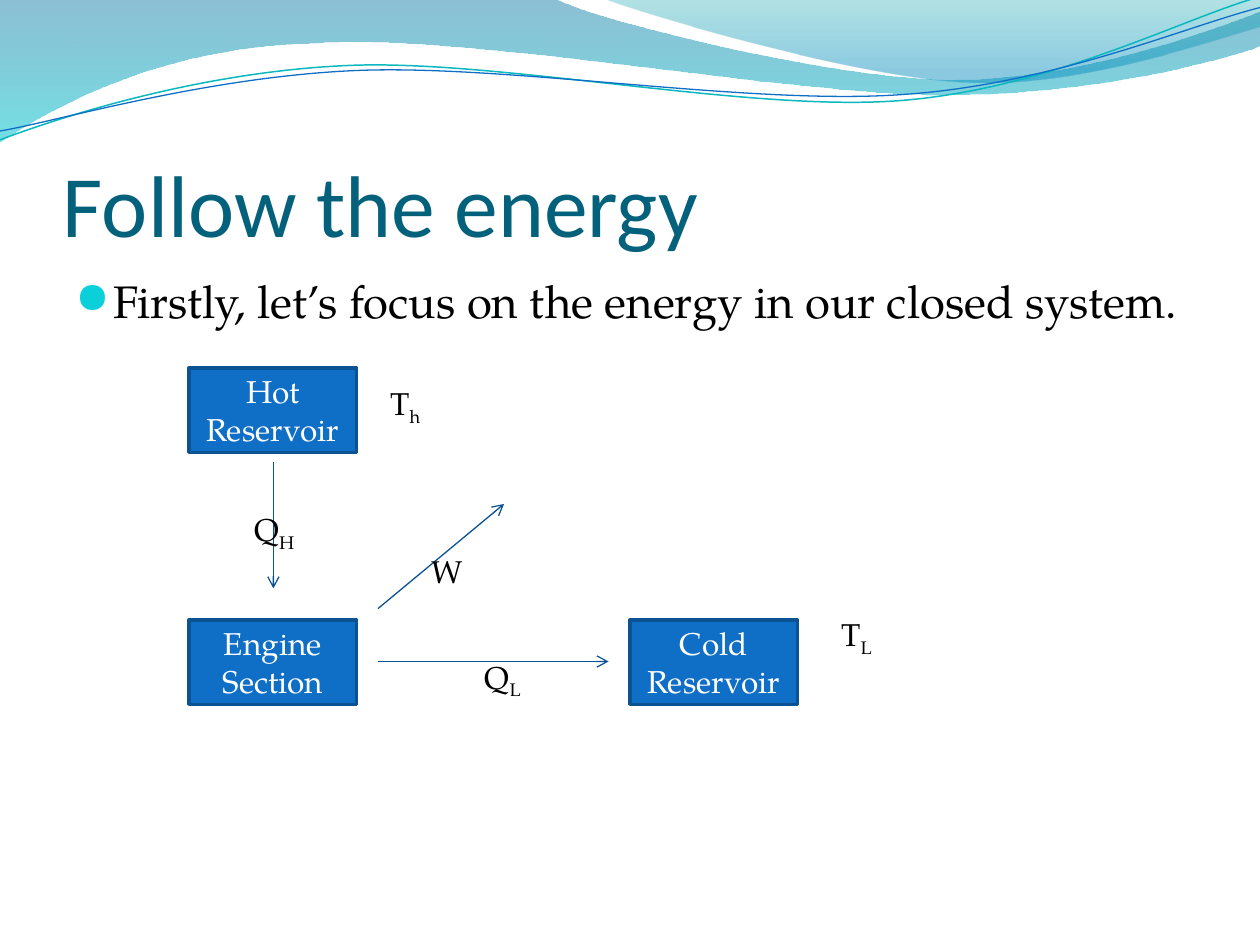
import dataclasses

import pptx
import pptx.dml.color
import pptx.enum.shapes
import pptx.enum.text
import pptx.oxml
import pptx.oxml.ns
import pptx.util
from pptx.util import Inches

qn = pptx.oxml.ns.qn
Pt = pptx.util.Pt
ANCHOR = pptx.enum.text.MSO_ANCHOR
ALIGN = pptx.enum.text.PP_ALIGN


@dataclasses.dataclass(frozen=True)
class Theme:
    """Colours, fonts and sizes of the slide."""
    title: str = "04617B"
    text: str = "000000"
    light: str = "FFFFFF"
    bullet: str = "0BD0D9"
    box: str = "0F6FC6"
    box_line: str = "0B5292"
    arrow: str = "095295"
    teal_line: str = "0AB8BF"
    left_wave: tuple = ((0, "0074A1", 45), (1, "00C6CF", 55))
    right_wave: tuple = ((0, "00A1A9", 30), (0.8, "008BBF", 45))
    title_font: str = "Calibri"
    body_font: str = "TeX Gyre Pagella"
    bullet_font: str = "OpenSymbol"
    title_size: float = 50
    body_size: float = 26
    label_size: float = 18


THEME = Theme()

LEFT_WAVE = [[(0, 0)], [(4.4, -0.01)],
             [(4.76, 0.17), (6.64, 0.63), (7.58, 0.63)],
             [(8.53, 0.63), (9.58, 0.26), (10, 0.09)], [(10.01, 0.36)],
             [(9.83, 0.44), (8.7, 0.76), (7.46, 0.75)],
             [(6.22, 0.75), (3.82, 0.28), (2.57, 0.34)],
             [(1.29, 0.36), (0.46, 0.83), (-0.01, 1.13)], [(0, 0)]]
RIGHT_WAVE = [[(4.79, -0.01)],
              [(5.09, 0.11), (6.82, 0.62), (7.69, 0.65)],
              [(8.56, 0.69), (9.61, 0.32), (10, 0.21)], [(10, 0)], [(4.79, -0.01)]]
TEAL_CURVE = [[(0, 1.11)],
              [(0.48, 0.93), (1.58, 0.57), (2.77, 0.52)],
              [(3.95, 0.47), (5.93, 0.89), (7.13, 0.8)],
              [(8.33, 0.71), (9.38, 0.15), (9.98, -0.02)]]
BLUE_CURVE = [[(0, 1.04)],
              [(0.47, 0.96), (1.64, 0.61), (2.83, 0.56)],
              [(4.03, 0.51), (5.97, 0.84), (7.17, 0.75)],
              [(8.36, 0.67), (9.41, 0.21), (10, 0.06)]]


def rgb(value):
    """Return a colour from its hex digits."""
    return pptx.dml.color.RGBColor.from_string(value)


def apply_format(target, values):
    """Set every attribute named in a dict of format values."""
    for name, value in values.items():
        setattr(target, name, value)


def add_child(parent, tag, **attributes):
    """Append a drawing element with the given attributes."""
    child = pptx.oxml.parse_xml(f"<a:{tag} {pptx.oxml.ns.nsdecls('a')}/>")
    for name, value in attributes.items():
        child.set(name, value)
    parent.append(child)
    return child


def bend(shape, outline):
    """Join the line steps of each three-point segment into a cubic curve."""
    steps = iter(list(shape.element.iter(qn("a:lnTo"))))
    for segment in outline[1:]:
        group = [next(steps) for _ in segment]
        if len(group) == 1:
            continue
        parent = group[0].getparent()
        place = parent.index(group[0])
        curve = add_child(parent, "cubicBezTo")
        for step in group:
            curve.append(step[0])
            parent.remove(step)
        parent.insert(place, curve)


def add_outline(page, outline, close):
    """Draw an outline of lines and curves without a shadow."""
    start, *rest = [(Inches(x), Inches(y)) for segment in outline for x, y in segment]
    builder = page.shapes.build_freeform(*start)
    builder.add_line_segments(rest, close=close)
    shape = builder.convert_to_shape()
    bend(shape, outline)
    shape.shadow.inherit = False
    return shape


def add_wave(page, outline, stops):
    """Add a closed wave with a translucent downward gradient."""
    shape = add_outline(page, outline, True)
    shape.line.fill.background()
    shape.fill.gradient()
    shape.fill.gradient_angle = 270
    for stop, (position, colour, _) in zip(shape.fill.gradient_stops, stops):
        stop.position = position
        stop.color.rgb = rgb(colour)
    for node, (_, _, opacity) in zip(shape.element.iter(qn("a:gs")), stops):
        add_child(node[0], "alpha", val=str(opacity * 1000))


def add_curve(page, outline, colour, width):
    """Add an open curved line."""
    shape = add_outline(page, outline, False)
    shape.fill.background()
    shape.line.color.rgb = rgb(colour)
    shape.line.width = Pt(width)


def write(shape, text, size, colour, font=THEME.body_font, subscript="", frame=None, para=None):
    """Write one paragraph with an optional subscript and return it."""
    apply_format(shape.text_frame, {"word_wrap": True, **(frame or {})})
    paragraph = shape.text_frame.paragraphs[0]
    apply_format(paragraph, para or {})
    for part in filter(None, (text, subscript)):
        span = paragraph.add_run()
        span.text = part
        apply_format(span.font, {"name": font, "size": Pt(size)})
        span.font.color.rgb = rgb(colour)
    if subscript:
        span.font._element.set("baseline", "-25000")
    return paragraph


def add_title(page, text):
    """Add the slide title."""
    box = page.shapes.add_textbox(Inches(0.5), Inches(0.77), Inches(9), Inches(1.25))
    frame = {"vertical_anchor": ANCHOR.BOTTOM, "margin_left": 0,
             "margin_right": 0, "margin_bottom": 0}
    write(box, text, THEME.title_size, THEME.title, THEME.title_font, frame=frame)


def add_bullet(page, text):
    """Add the body text with its round bullet."""
    box = page.shapes.add_textbox(Inches(0.5), Inches(2.12), Inches(9), Inches(4.8))
    para = write(box, text, THEME.body_size, THEME.text,
                 para={"space_before": Pt(0.2 * THEME.body_size)})
    properties = para._p.get_or_add_pPr()
    properties.set("marL", str(Inches(0.3)))
    properties.set("indent", str(Inches(-0.3)))
    add_child(add_child(properties, "buClr"), "srgbClr", val=THEME.bullet)
    add_child(properties, "buSzPct", val="95000")
    add_child(properties, "buFont", typeface=THEME.bullet_font)
    add_child(properties, "buChar", char="●")


def add_stage(page, text, left, top):
    """Add a labelled box of the energy diagram."""
    box = page.shapes.add_shape(pptx.enum.shapes.MSO_SHAPE.RECTANGLE, Inches(left),
                                Inches(top), Inches(1.33), Inches(0.67))
    box.shadow.inherit = False
    box.fill.solid()
    box.fill.fore_color.rgb = rgb(THEME.box)
    box.line.color.rgb = rgb(THEME.box_line)
    box.line.width = Pt(2)
    write(box, text, THEME.label_size, THEME.light,
          frame={"vertical_anchor": ANCHOR.MIDDLE}, para={"alignment": ALIGN.CENTER})


def add_arrow(page, *ends):
    """Add an arrow from the first point to the second."""
    arrow = page.shapes.add_connector(pptx.enum.shapes.MSO_CONNECTOR.STRAIGHT,
                                      *map(Inches, ends))
    arrow.line.color.rgb = rgb(THEME.arrow)
    arrow.line.width = Pt(0.75)
    properties = arrow.element.spPr
    add_child(properties.find(qn("a:ln")), "tailEnd", type="arrow")
    add_child(properties, "effectLst")


def add_label(page, text, subscript, left, top, width, wrap=True):
    """Add a quantity label."""
    box = page.shapes.add_textbox(Inches(left), Inches(top), Inches(width), Inches(0.4))
    write(box, text, THEME.label_size, THEME.text, subscript=subscript,
          frame={"word_wrap": wrap, "auto_size": pptx.enum.text.MSO_AUTO_SIZE.SHAPE_TO_FIT_TEXT})


def main():
    """Build the slide and save it."""
    deck = pptx.Presentation()
    apply_format(deck, {"slide_width": Inches(10), "slide_height": Inches(7.5)})
    page = deck.slides.add_slide(deck.slide_layouts[6])
    add_wave(page, LEFT_WAVE, THEME.left_wave)
    add_wave(page, RIGHT_WAVE, THEME.right_wave)
    add_curve(page, TEAL_CURVE, THEME.teal_line, 0.85)
    add_curve(page, BLUE_CURVE, THEME.box, 0.75)
    add_title(page, "Follow the energy")
    add_bullet(page, "Firstly, let’s focus on the energy in our closed system.")
    for stage in (("Hot Reservoir", 1.5, 2.92), ("Engine Section", 1.5, 4.92),
                  ("Cold Reservoir", 5, 4.92)):
        add_stage(page, *stage)
    for ends in ((2.17, 3.67, 2.17, 4.67), (3, 5.25, 4.83, 5.25), (3, 4.83, 4, 4)):
        add_arrow(page, *ends)
    for label in (("Q", "H", 1.92, 4, 0.54, False), ("Q", "L", 3.75, 5.17, 0.58),
                  ("W", "", 3.33, 4.33, 0.42), ("T", "h", 3, 3, 0.58),
                  ("T", "L", 6.58, 4.83, 0.5)):
        add_label(page, *label)
    deck.save("out.pptx")


if __name__ == "__main__":
    main()
